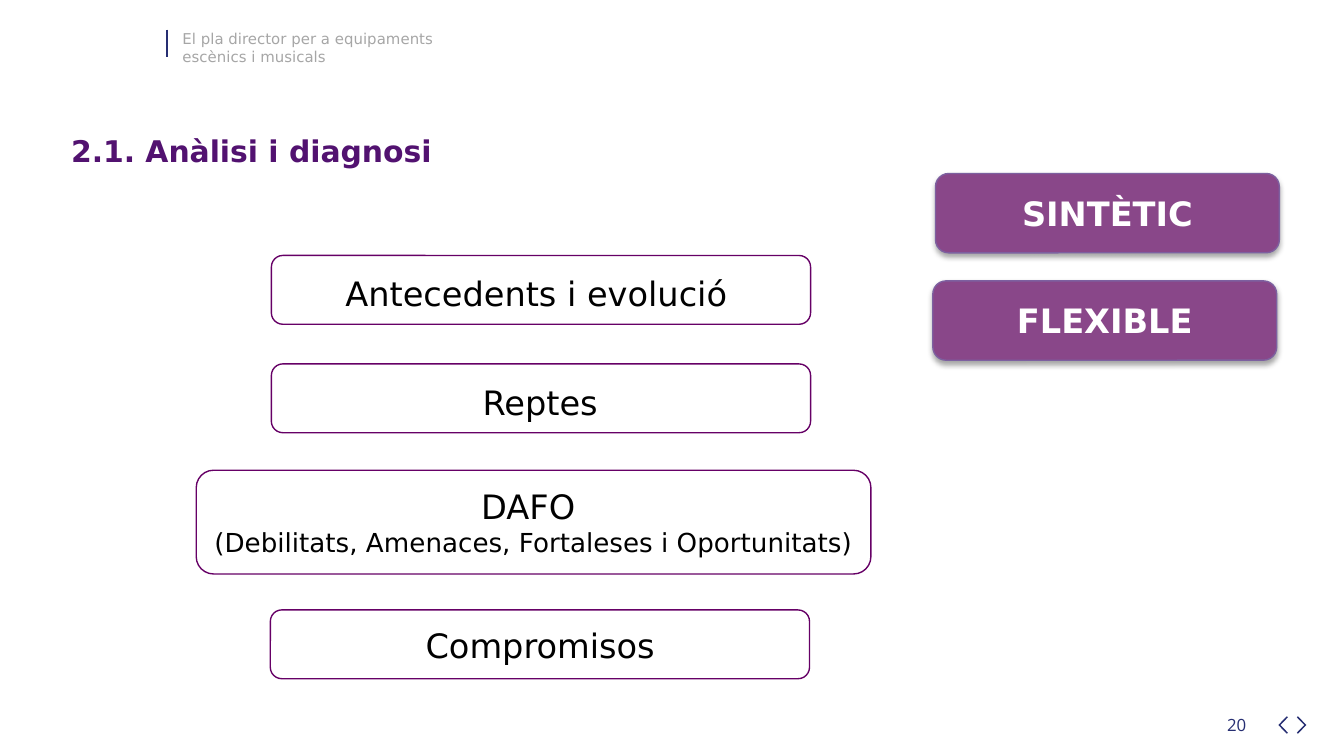
import pptx
import pptx.dml.color
import pptx.enum.shapes
import pptx.enum.text
import pptx.oxml
import pptx.oxml.ns
import pptx.util

Cm, Pt = pptx.util.Cm, pptx.util.Pt
RGBColor = pptx.dml.color.RGBColor
SHAPE = pptx.enum.shapes.MSO_SHAPE
ALIGN = pptx.enum.text.PP_ALIGN
ANCHOR = pptx.enum.text.MSO_ANCHOR

NAVY = RGBColor(0x26, 0x2E, 0x72)
GREY = RGBColor(0xA6, 0xA6, 0xA6)
TITLE_PURPLE = RGBColor(0x52, 0x12, 0x70)
OUTLINE_PURPLE = RGBColor(0x66, 0x00, 0x66)
TAG_PURPLE = RGBColor(0x89, 0x47, 0x89)
TAG_EDGE = RGBColor(0x7D, 0x60, 0xA0)
WHITE = RGBColor(0xFF, 0xFF, 0xFF)
BLACK = RGBColor(0, 0, 0)
FONT = "DejaVu Sans"

SHADOW = (
    f'<a:outerShdw {pptx.oxml.ns.nsdecls("a")} blurRad="{Pt(3.1)}" '
    f'dist="{Pt(1.8)}" dir="5400000" rotWithShape="0">'
    '<a:srgbClr val="000000"><a:alpha val="35000"/></a:srgbClr></a:outerShdw>'
)


def in_cm(box):
    return [Cm(length) for length in box]


def write(frame, lines, color, align=ALIGN.LEFT, bold=False, font=FONT):
    """Fill a frame with (text, size) lines, one paragraph each."""
    frame.word_wrap = True
    for index, (text, size) in enumerate(lines):
        paragraph = frame.paragraphs[0] if index == 0 else frame.add_paragraph()
        paragraph.alignment = align
        run = paragraph.add_run()
        run.text = text
        run.font.name = font
        run.font.size = Pt(size)
        run.font.bold = bold
        run.font.color.rgb = color


def add_label(slide, box, lines, color, **style):
    label = slide.shapes.add_textbox(*in_cm(box))
    write(label.text_frame, lines, color, **style)


def add_rounded(slide, box, fill, edge):
    rounded = slide.shapes.add_shape(SHAPE.ROUNDED_RECTANGLE, *in_cm(box))
    rounded.shadow.inherit = False
    rounded.fill.solid()
    rounded.fill.fore_color.rgb = fill
    rounded.line.color.rgb = edge
    rounded.line.width = Pt(0.75)
    return rounded


def add_header(slide, box):
    left, top = box[:2]
    add_label(slide, box, [("El pla director per a equipaments", 8),
                           ("escènics i musicals", 8)], GREY)
    bar = slide.shapes.add_connector(
        pptx.enum.shapes.MSO_CONNECTOR.STRAIGHT,
        *in_cm((left - 0.05, top + 0.13, left - 0.05, top + 0.64)))
    bar.line.color.rgb = NAVY
    bar.line.width = Pt(1)
    bar.element.spPr.append(pptx.oxml.parse_xml(
        f'<a:effectLst {pptx.oxml.ns.nsdecls("a")}/>'))


def add_chevron(slide, box, points_right):
    left, top, width, height = box
    edge, middle = 0.02, height / 2
    outline = [(edge, 0), (width, middle), (edge, height),
               (0, height - edge), (width - 2 * edge, middle), (0, edge)]
    points = [(Cm(left + (x if points_right else width - x)), Cm(top + y))
              for x, y in outline]
    builder = slide.shapes.build_freeform(*points[0])
    builder.add_line_segments(points[1:])
    chevron = builder.convert_to_shape()
    chevron.shadow.inherit = False
    chevron.fill.solid()
    chevron.fill.fore_color.rgb = NAVY
    chevron.line.fill.background()


def add_footer(slide, box):
    left, top, width, _ = box
    add_label(slide, box, [("20", 9)], NAVY, font="Open Sans")
    for offset, points_right in ((-0.2, False), (0.15, True)):
        add_chevron(slide, (left + width + offset, top + 0.15, 0.18, 0.33),
                    points_right)


def add_title(slide, box):
    title = slide.shapes.title
    title.left, title.top, title.width, title.height = in_cm(box)
    frame = title.text_frame
    frame.auto_size = pptx.enum.text.MSO_AUTO_SIZE.NONE
    frame.vertical_anchor = ANCHOR.TOP
    write(frame, [("2.1. Anàlisi i diagnosi", 16)], TITLE_PURPLE, bold=True)


def add_step(slide, box, label_box, lines):
    add_rounded(slide, box, WHITE, OUTLINE_PURPLE)
    add_label(slide, label_box, lines, BLACK, align=ALIGN.CENTER)


def add_tag(slide, box, text):
    tag = add_rounded(slide, box, TAG_PURPLE, TAG_EDGE)
    effects = tag.element.spPr.find(pptx.oxml.ns.qn("a:effectLst"))
    effects.append(pptx.oxml.parse_xml(SHADOW))
    tag.text_frame.vertical_anchor = ANCHOR.MIDDLE
    write(tag.text_frame, [(text, 18)], WHITE, align=ALIGN.CENTER, bold=True)


def main():
    deck = pptx.Presentation()
    deck.slide_width, deck.slide_height = Cm(25.4), Cm(14.29)
    slide = deck.slides.add_slide(deck.slide_layouts[5])

    # Page furniture and title
    add_header(slide, (3.2, 0.43, 7.65, 0.94))
    add_footer(slide, (22.94, 13.39, 1.42, 0.64))
    add_title(slide, (1.09, 2.39, 23.8, 0.94))

    # Steps of the analysis: outline, label area, lines
    steps = [
        ((5.13, 4.83, 10.19, 1.3), (5.72, 5.03, 9.04, 1.02),
         [("Antecedents i evolució ", 18)]),
        ((5.13, 6.88, 10.19, 1.3), (8.1, 7.09, 4.22, 1.02),
         [("Reptes", 18)]),
        ((3.71, 8.89, 12.75, 1.96), (1.5, 9.07, 17.17, 1.63),
         [("DAFO ", 18),
          ("(Debilitats, Amenaces, Fortaleses i Oportunitats)", 14)]),
        ((5.11, 11.53, 10.19, 1.3), (7.52, 11.68, 5.38, 1.02),
         [("Compromisos", 18)]),
    ]
    for box, label_box, lines in steps:
        add_step(slide, box, label_box, lines)

    # Qualities of the plan
    add_tag(slide, (17.68, 3.28, 6.5, 1.5), "SINTÈTIC")
    add_tag(slide, (17.63, 5.31, 6.5, 1.5), "FLEXIBLE")

    deck.save("out.pptx")


if __name__ == "__main__":
    main()
